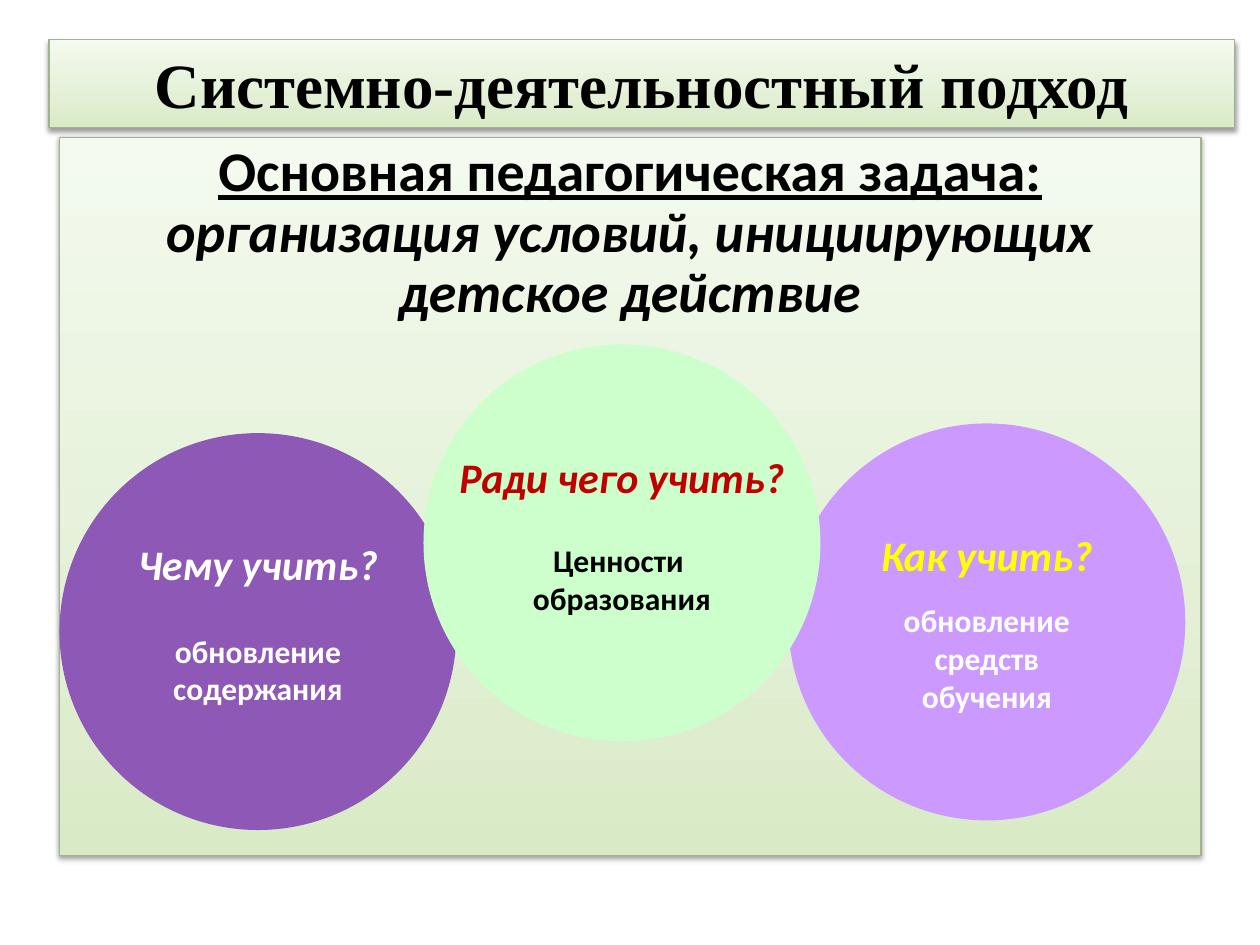
from copy import deepcopy

from lxml import etree
from pptx import Presentation
from pptx.dml.color import RGBColor
from pptx.enum.shapes import MSO_SHAPE as SHAPE
from pptx.enum.text import MSO_ANCHOR as ANCHOR, MSO_AUTO_SIZE as AUTO, PP_ALIGN as ALIGN
from pptx.oxml.ns import qn
from pptx.util import Pt

TITLE = "Системно-деятельностный подход"
TASK = ["Основная педагогическая задача:",
        "организация условий, инициирующих",
        "детское действие"]
# left, top, fill, question, question colour, answer lines, answer colour,
# gap above the answer, bottom inset
CIRCLES = [
    (34, 247.5, "8E58B6", "Чему учить?", "FFFFFF",
     ["обновление", "содержания"], "FFFFFF", 24.4, 13.4),
    (450.5, 242, "CC99FF", "Как учить?", "FFFF00",
     ["обновление", "средств", "обучения"], "FFFFFF", 12.2, 3.6),
    (242, 196.8, "CCFFCC", "Ради чего учить?", "C00000",
     ["Ценности ", "образования"], "000000", 22, 13.4),
]
DIAMETER = 226.8
GRADIENT = [(0, "D9EAC6"), (0.35, "E3F0D6"), (1, "F4FAEF")]


def rgb(value):
    return RGBColor.from_string(value)


def style_panel(sp):
    """Apply the green gradient, thin outline and soft drop shadow."""
    sp.fill.gradient()
    sp.fill.gradient_angle = 90
    stops = sp._element.spPr.find(".//" + qn("a:gsLst"))
    stops.insert(1, deepcopy(stops[0]))
    for stop, (position, color) in zip(sp.fill.gradient_stops, GRADIENT):
        stop.position = position
        stop.color.rgb = rgb(color)
    sp.line.color.rgb = rgb("A1B28E")
    sp.line.width = Pt(0.75)
    sp.shadow.inherit = False
    effects = sp._element.spPr.find(qn("a:effectLst"))
    shadow = etree.SubElement(effects, qn("a:outerShdw"), blurRad=str(Pt(3.1)),
                              dist=str(Pt(1.6)), dir="5400000", rotWithShape="0")
    color = etree.SubElement(shadow, qn("a:srgbClr"), val="000000")
    etree.SubElement(color, qn("a:alpha"), val="38000")


def format_line(p, size, color, font="Calibri", italic=False, underline=False):
    p.alignment = ALIGN.CENTER
    for r in p.runs:
        f = r.font
        f.name, f.size, f.bold = font, Pt(size), True
        f.italic, f.underline = italic, underline
        f.color.rgb = rgb(color)


def add_circle(s, left, top, fill, question, q_color, answer, a_color, gap, inset):
    sp = s.shapes.add_shape(SHAPE.OVAL, Pt(left), Pt(top), Pt(DIAMETER), Pt(DIAMETER))
    sp.fill.solid()
    sp.fill.fore_color.rgb = rgb(fill)
    sp.line.fill.background()
    sp.shadow.inherit = False
    tf = sp.text_frame
    tf.text = "\n".join([question] + answer)
    tf.word_wrap = False
    tf.vertical_anchor = ANCHOR.MIDDLE
    tf.margin_bottom = Pt(inset)
    first, *rest = tf.paragraphs
    format_line(first, 24, q_color, italic=True)
    for p in rest:
        format_line(p, 18, a_color)
    rest[0].space_before = Pt(gap)


prs = Presentation()
prs.slide_width, prs.slide_height = Pt(720), Pt(540)
s = prs.slides.add_slide(prs.slide_layouts[5])

title = s.shapes.title
title.left, title.top, title.width, title.height = Pt(28), Pt(22.5), Pt(677.5), Pt(50.4)
style_panel(title)
tf = title.text_frame
tf.text = TITLE
tf.auto_size = AUTO.NONE
tf.vertical_anchor = ANCHOR.BOTTOM
format_line(tf.paragraphs[0], 36, "000000", font="Times New Roman")

panel = s.shapes.add_shape(SHAPE.RECTANGLE, Pt(34), Pt(78.5), Pt(652.3), Pt(410.4))
style_panel(panel)
tf = panel.text_frame
tf.text = "\n".join(TASK)
tf.word_wrap = True
tf.vertical_anchor = ANCHOR.TOP
for i, p in enumerate(tf.paragraphs):
    format_line(p, 32, "000000", italic=i > 0, underline=i == 0)
    p.line_spacing = 0.9

for circle in CIRCLES:
    add_circle(s, *circle)

prs.save("out.pptx")
